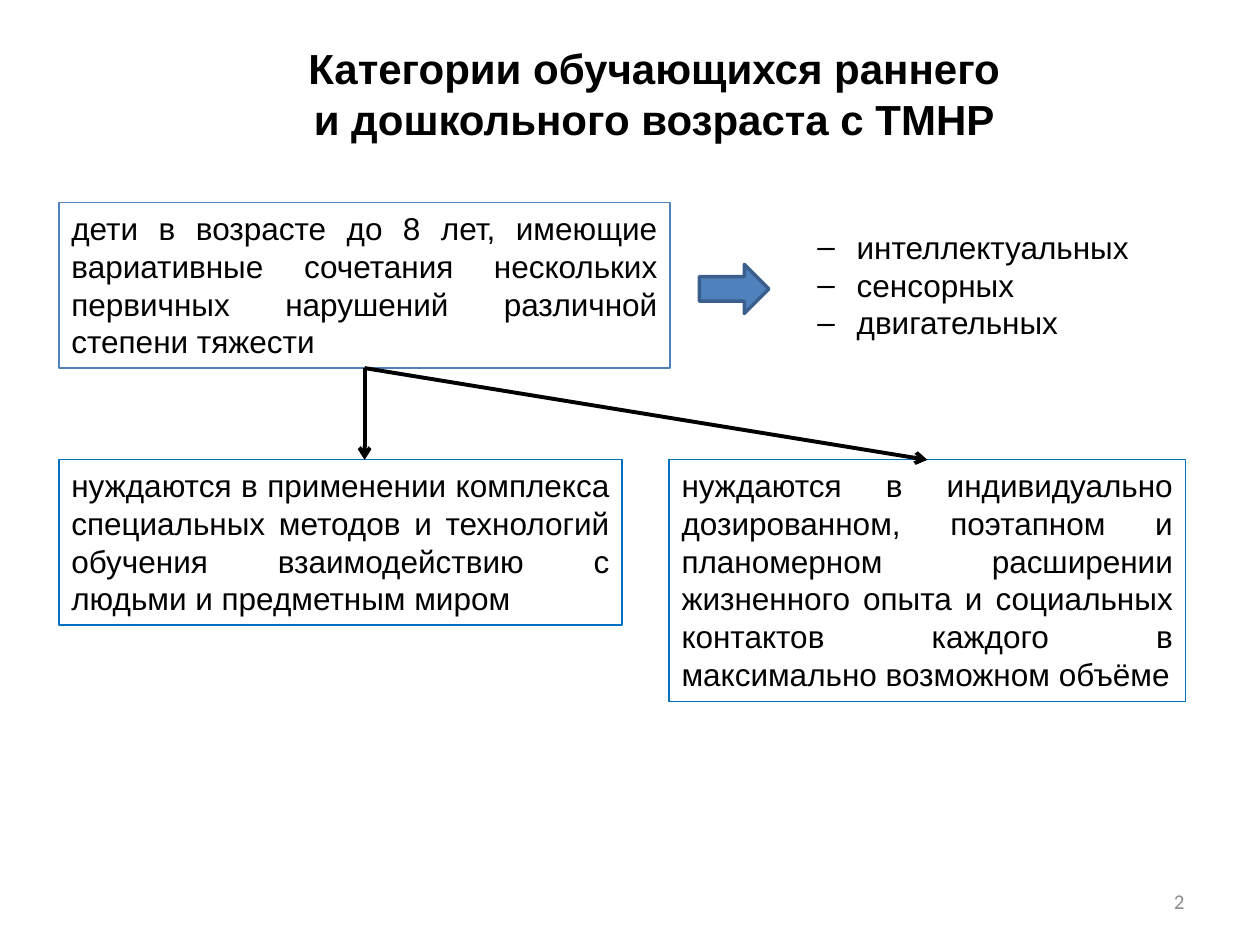
"""Build the slide on categories of young learners with multiple disabilities."""
from lxml.etree import SubElement
from pptx import Presentation
from pptx.dml.color import RGBColor
from pptx.enum.shapes import MSO_CONNECTOR, MSO_SHAPE
from pptx.enum.text import MSO_ANCHOR, PP_ALIGN
from pptx.oxml.ns import qn
from pptx.util import Cm, Pt

BLACK = RGBColor(0x00, 0x00, 0x00)
GRAY = RGBColor(0x8C, 0x8C, 0x8C)
BLUE = RGBColor(0x4F, 0x81, 0xBD)
DARK_BLUE = RGBColor(0x3A, 0x5F, 0x8C)
BRIGHT_BLUE = RGBColor(0x00, 0x70, 0xC0)

LEFT, UPPER, LOWER = 1.19, 4.09, 9.27
BOX_HEIGHT = 3.33
INDENT = Cm(0.79)

BODY = {"name": "Arial", "size": Pt(18), "bold": False}
HEADING = {"name": "Arial", "size": Pt(24), "bold": True}
NUMBERING = {"name": "Calibri", "size": Pt(12), "bold": False}

TITLE = "Категории обучающихся раннего и дошкольного возраста с ТМНР"
IMPAIRMENTS = ["интеллектуальных", "сенсорных", "двигательных"]
CHILDREN = (
    "дети в возрасте до 8 лет, имеющие вариативные сочетания нескольких "
    "первичных нарушений различной степени тяжести",
    (LEFT, UPPER, 12.32, BOX_HEIGHT), BLUE,
)
METHODS = (
    "нуждаются в применении комплекса специальных методов и технологий обучения "
    "взаимодействию с людьми и предметным миром",
    (LEFT, LOWER, 11.35, BOX_HEIGHT), BRIGHT_BLUE,
)
EXPERIENCE = (
    "нуждаются в индивидуально дозированном, поэтапном и планомерном расширении "
    "жизненного опыта и социальных контактов каждого в максимально возможном объёме",
    (13.49, LOWER, 10.41, 4.88), BRIGHT_BLUE,
)


def write(frame, lines, font, align, color=BLACK, anchor=MSO_ANCHOR.TOP):
    frame.word_wrap = True
    frame.vertical_anchor = anchor
    for index, line in enumerate(lines):
        paragraph = frame.paragraphs[0] if index == 0 else frame.add_paragraph()
        paragraph.alignment = align
        run = paragraph.add_run()
        run.text = line
        for key, value in font.items():
            setattr(run.font, key, value)
        run.font.color.rgb = color


def add_text(slide, area, lines, font, align, **look):
    frame = slide.shapes.add_textbox(*map(Cm, area)).text_frame
    write(frame, lines, font, align, **look)
    return frame


def add_outlined(slide, preset, area, line_color, line_width):
    shape = slide.shapes.add_shape(preset, *map(Cm, area))
    shape.shadow.inherit = False
    shape.line.color.rgb = line_color
    shape.line.width = Pt(line_width)
    return shape


def add_statement(slide, statement, area, line_color):
    box = add_outlined(slide, MSO_SHAPE.RECTANGLE, area, line_color, 0.75)
    box.fill.background()
    write(box.text_frame, [statement], BODY, PP_ALIGN.JUSTIFY)
    return box


def add_dashes(frame):
    for paragraph in frame.paragraphs:
        properties = paragraph._p.get_or_add_pPr()
        properties.set("marL", str(INDENT))
        properties.set("indent", str(-INDENT))
        SubElement(properties, qn("a:buFont"), typeface="Arial")
        SubElement(properties, qn("a:buChar"), char="‒")


def add_branch(slide, source, end_x):
    start_x = source.left + source.width // 2
    branch = slide.shapes.add_connector(
        MSO_CONNECTOR.STRAIGHT, start_x, source.top + source.height, end_x, Cm(LOWER))
    branch.begin_connect(source, 2)
    branch.line.color.rgb = BLACK
    branch.line.width = Pt(2.25)
    SubElement(branch.line._get_or_add_ln(), qn("a:tailEnd"), type="arrow")
    SubElement(branch._element.spPr, qn("a:effectLst"))
    return branch


def main():
    deck = Presentation()
    deck.slide_width, deck.slide_height = Cm(25.4), Cm(19.05)
    slide = deck.slides.add_slide(deck.slide_layouts[6])

    add_text(slide, (5.89, 0.74, 14.6, 2.31), [TITLE], HEADING, PP_ALIGN.CENTER)
    children = add_statement(slide, *CHILDREN)
    add_statement(slide, *METHODS)
    experience = add_statement(slide, *EXPERIENCE)

    add_dashes(add_text(slide, (16.23, 4.47, 8.53, 2.57), IMPAIRMENTS, BODY, PP_ALIGN.LEFT))
    pointer = add_outlined(slide, MSO_SHAPE.RIGHT_ARROW, (14.1, 5.33, 1.4, 0.99), DARK_BLUE, 2)
    pointer.fill.solid()
    pointer.fill.fore_color.rgb = BLUE

    add_branch(slide, children, children.left + children.width // 2)
    add_branch(slide, children, experience.left + experience.width // 2).end_connect(experience, 0)

    add_text(slide, (18.21, 17.65, 5.92, 1.02), ["2"], NUMBERING, PP_ALIGN.RIGHT,
             color=GRAY, anchor=MSO_ANCHOR.MIDDLE)
    deck.save("out.pptx")


if __name__ == "__main__":
    main()
